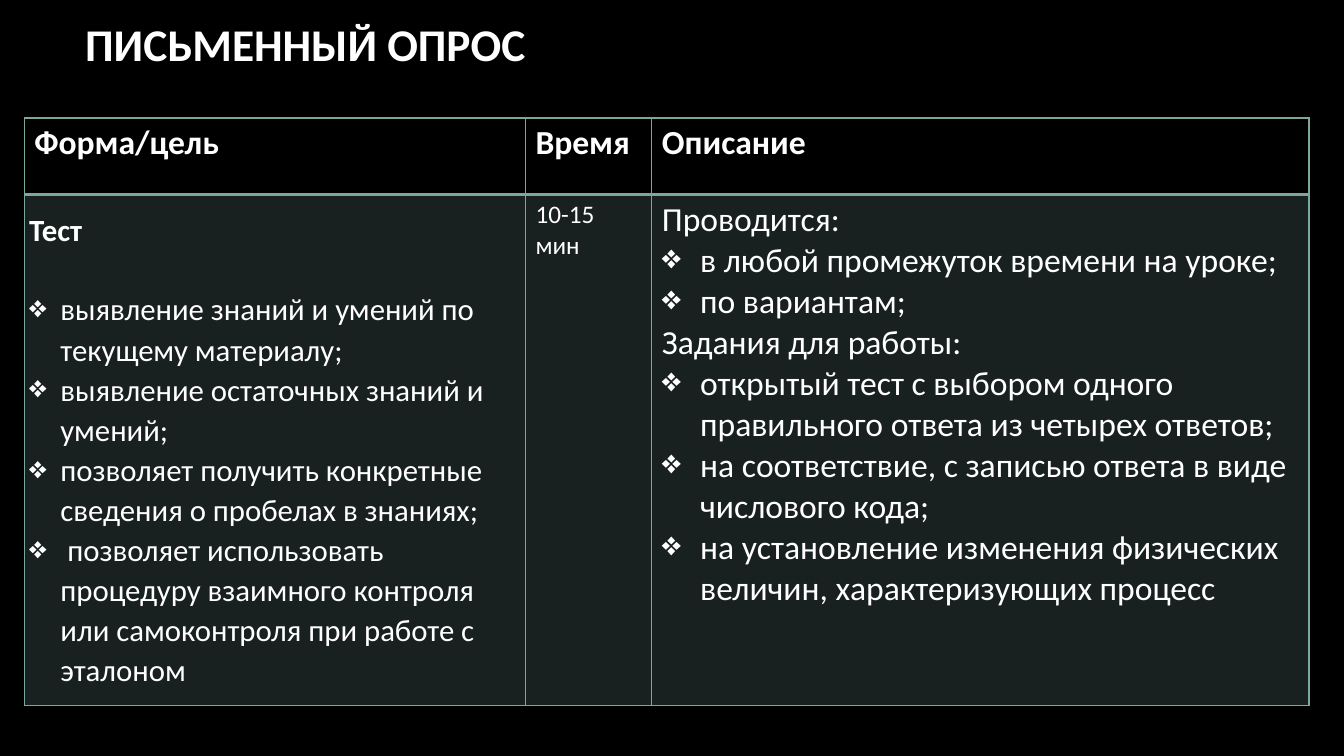
from lxml import etree
from pptx import Presentation
from pptx import util as u
from pptx.dml.color import RGBColor
from pptx.enum import text
from pptx.oxml import ns

BLACK = RGBColor(0x00, 0x00, 0x00)
WHITE = RGBColor(0xFF, 0xFF, 0xFF)
SAGE = RGBColor(0x7B, 0xA7, 0x9D)


def sub(node, tag, **attrs):
    return etree.SubElement(node, ns.qn(tag), {k: str(v) for k, v in attrs.items()})


class Deck:
    """Holds the style and the current slide; lengths are percents of the slide."""
    font = "Calibri"

    def __init__(self):
        self.prs = Presentation()
        self.prs.slide_width = u.Inches(13.33)
        self.prs.slide_height = u.Inches(7.5)
        self.slide = self.prs.slides.add_slide(self.prs.slide_layouts[6])
        fill = self.slide.background.fill
        fill.solid()
        fill.fore_color.rgb = BLACK

    def x(self, share):
        return round(self.prs.slide_width * share / 100)

    def y(self, share):
        return round(self.prs.slide_height * share / 100)

    def style(self, para, size, bold=False):
        font = para.font
        font.name, font.size, font.bold = self.font, u.Pt(size), bold
        font.color.rgb = WHITE

    def title(self, words, left, top, width, height, size):
        box = self.slide.shapes.add_textbox(
            self.x(left), self.y(top), self.x(width), self.y(height))
        frame = box.text_frame
        frame.word_wrap = True
        frame.vertical_anchor = text.MSO_ANCHOR.MIDDLE
        frame.text = words
        self.style(frame.paragraphs[0], size, True)

    def table(self, left, top, cols, rows):
        grid = self.slide.shapes.add_table(
            len(rows), len(cols), self.x(left), self.y(top),
            self.x(sum(cols)), self.y(sum(rows))).table
        grid.horz_banding = False
        for col, share in zip(grid.columns, cols):
            col.width = self.x(share)
        for row, share in zip(grid.rows, rows):
            row.height = self.y(share)
        return grid

    def edge(self, cell, **widths):
        props = cell._tc.get_or_add_tcPr()
        for side in "LRTB":
            line = sub(props, f"a:ln{side}", w=u.Pt(widths.get(side, 1)))
            sub(sub(line, "a:solidFill"), "a:srgbClr", val=SAGE)

    def tint(self, cell, alpha):
        cell.fill.solid()
        cell.fill.fore_color.rgb = SAGE
        color = cell._tc.tcPr.find(ns.qn("a:solidFill"))[0]
        sub(color, "a:alpha", val=alpha * 1000)

    def put(self, cell, lines, size, bold=False, indent=0, space=None):
        """Lines that start with ❖ become bullets with a hanging indent."""
        frame = cell.text_frame
        for i, line in enumerate(lines):
            para = frame.paragraphs[0] if i == 0 else frame.add_paragraph()
            para.text = line.removeprefix("❖")
            para.line_spacing = space
            self.style(para, size, bold)
            if line.startswith("❖"):
                props = para._p.get_or_add_pPr()
                hang = u.Inches(indent)
                props.set("marL", str(hang))
                props.set("indent", str(-hang))
                mark = etree.Element(ns.qn("a:buChar"), {"char": "❖"})
                props.find(ns.qn("a:defRPr")).addprevious(mark)
        return frame.paragraphs


GOALS = [
    "Тест",
    "❖выявление знаний и умений по текущему материалу;",
    "❖выявление остаточных знаний и умений;",
    "❖позволяет получить конкретные сведения о пробелах в знаниях;",
    "❖ позволяет использовать процедуру взаимного контроля или самоконтроля "
    "при работе с эталоном",
]
NOTES = [
    "Проводится:",
    "❖в любой промежуток времени на уроке;",
    "❖по вариантам;",
    "Задания для работы:",
    "❖открытый тест с выбором одного правильного ответа из четырех ответов;",
    "❖на соответствие, с записью ответа в виде числового кода;",
    "❖на установление изменения физических величин, характеризующих процесс",
]


def main():
    deck = Deck()
    deck.title("ПИСЬМЕННЫЙ ОПРОС", 5.6, 1.7, 83.1, 8.1, 32.4)

    # Table frame
    grid = deck.table(1.8, 15.6, cols=[37.3, 9.4, 48.9], rows=[10.1, 67.6])

    # Header row, borders and fills
    for col, word in enumerate(["Форма/цель", "Время", "Описание"]):
        head, body = grid.cell(0, col), grid.cell(1, col)
        deck.put(head, [word], 24, bold=True)
        deck.edge(head, B=2)
        head.fill.background()
        deck.edge(body, T=2)
        deck.tint(body, 20)

    # Goals
    goal = grid.cell(1, 0)
    goal.vertical_anchor = text.MSO_ANCHOR.MIDDLE
    goal.margin_left = goal.margin_right = u.Inches(0.05)
    first = deck.put(goal, GOALS, 22, indent=0.31, space=1.07)[0]
    first.font.bold = True
    first.space_after = u.Pt(28)

    # Time and description
    deck.put(grid.cell(1, 1), ["10-15 мин"], 18)
    deck.put(grid.cell(1, 2), NOTES, 24, indent=0.38)

    deck.prs.save("out.pptx")


if __name__ == "__main__":
    main()
